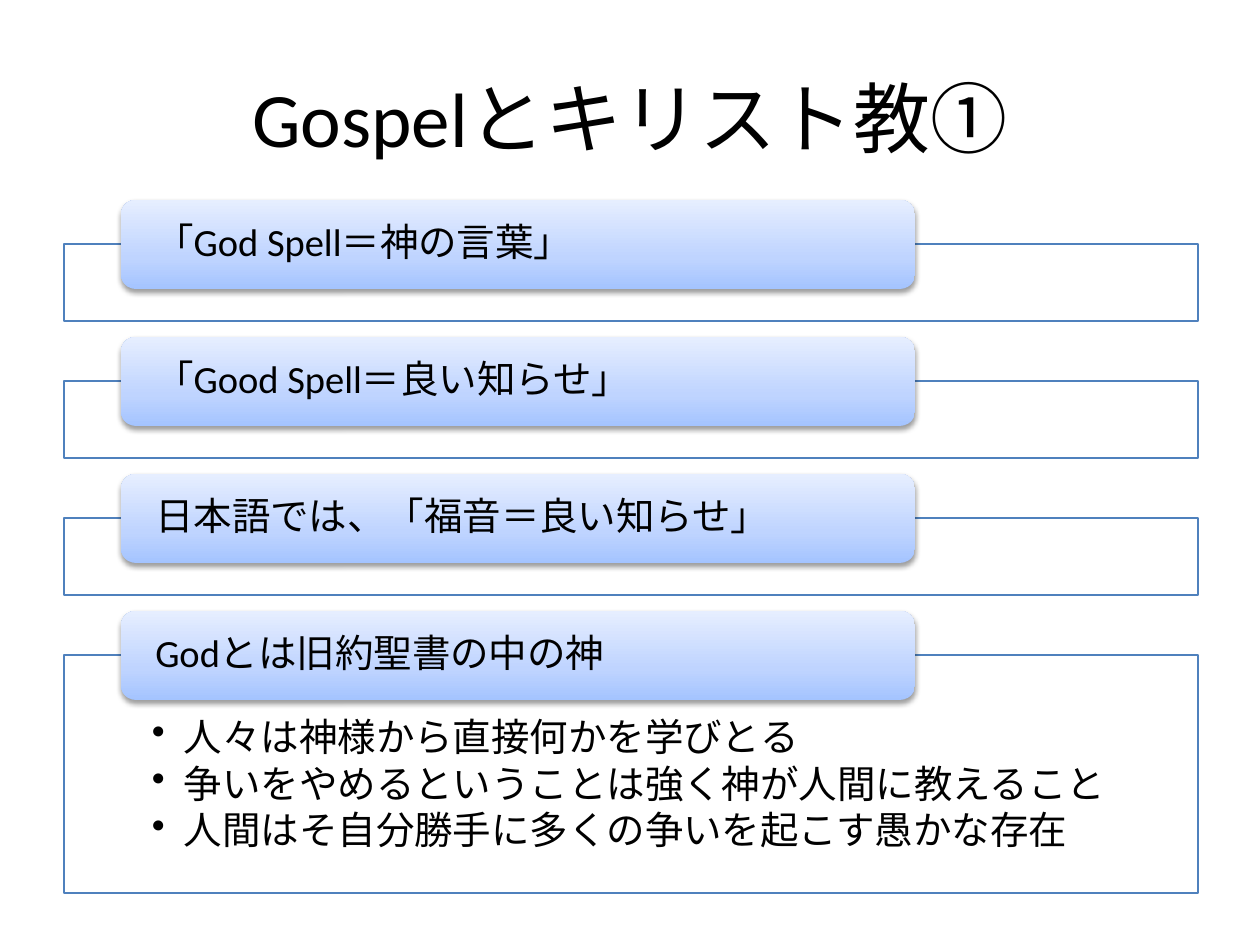
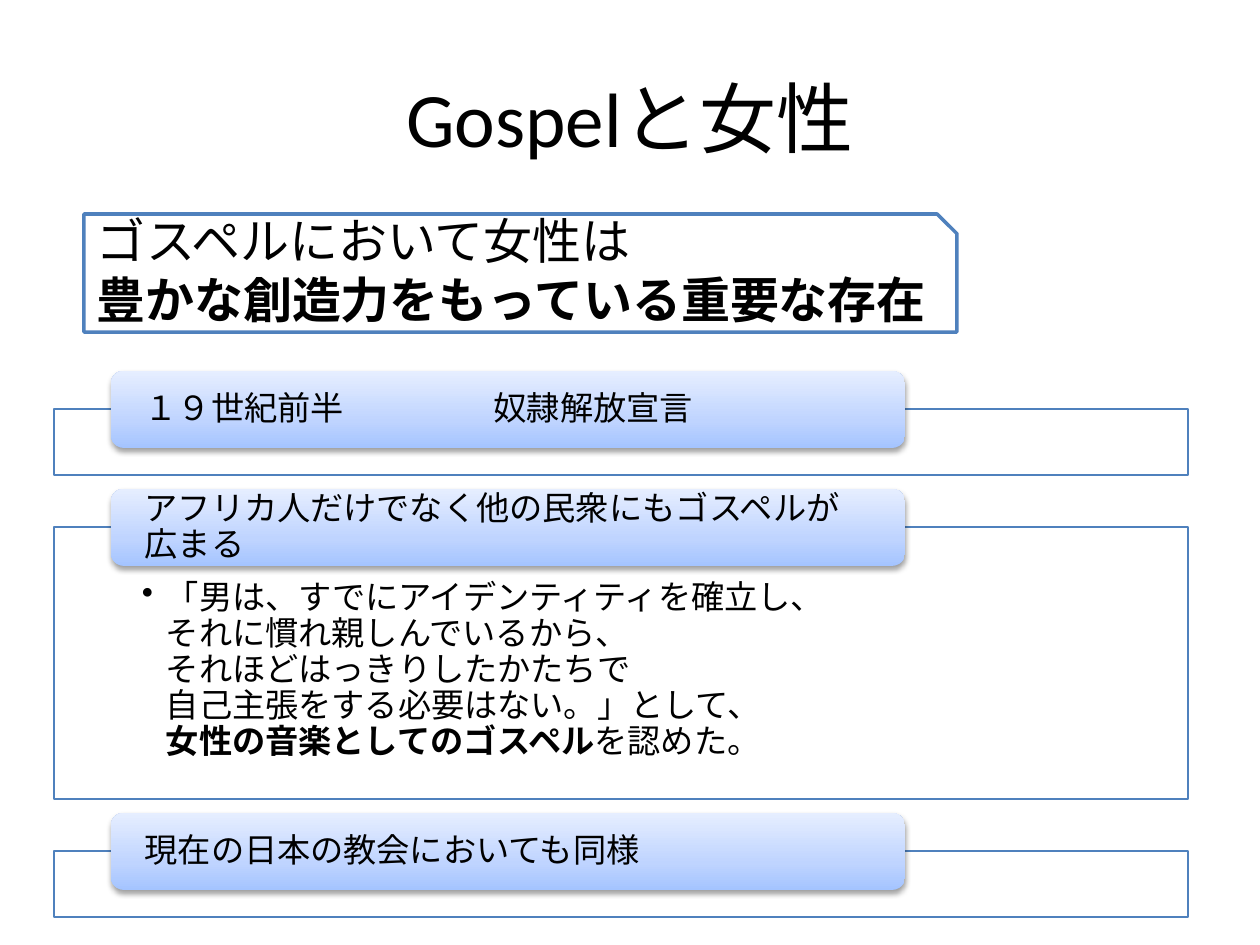
"""Builds two slides on gospel music, each a title over a tabbed list."""
import copy

import lxml.etree
import pptx
import pptx.dml.color
import pptx.enum.lang
import pptx.enum.shapes
import pptx.enum.text
import pptx.oxml.ns
import pptx.util

PX = 914400 // 126
COLORS = {"text": "000000", "white": "FFFFFF", "line": "4F81BD", "shadow": "000000"}
TAB_STOPS = [(0, "A4C4FF"), (0.35, "BFD4FF"), (1, "E6EEFF")]
FONT = "Calibri"
SHAPES = pptx.enum.shapes.MSO_SHAPE
ANCHORS = pptx.enum.text.MSO_ANCHOR
SNIP_BOX = (84, 214, 873, 118)
TITLE_BOX = (63, 38, 1134, 158)

CHRISTIANITY_STYLE = {"size": 22, "tab": 89, "frame": 77, "gap": 16,
                      "indent": 32, "top": 63, "bottom": 21}
WOMEN_STYLE = {"size": 19, "tab": 77, "frame": 66, "gap": 14,
               "indent": 24, "top": 54, "bottom": 19}

CHRISTIANITY = [
    ("「God Spell＝神の言葉」", 77, []),
    ("「Good Spell＝良い知らせ」", 77, []),
    ("日本語では、「福音＝良い知らせ」", 77, []),
    ("Godとは旧約聖書の中の神", 238, [
        [("人々は神様から直接何かを学びとる", False)],
        [("争いをやめるということは強く神が人間に教えること", False)],
        [("人間はそ自分勝手に多くの争いを起こす愚かな存在", False)],
    ]),
]
WOMEN = [
    ("１９世紀前半\t\t奴隷解放宣言", 66, []),
    ("アフリカ人だけでなく他の民衆にもゴスペルが広まる", 272, [
        [("「男は、すでにアイデンティティを確立し、\nそれに慣れ親しんでいるから、\n"
          "それほどはっきりしたかたちで\n自己主張をする必要はない。」として、\n", False),
         ("女性の音楽としてのゴスペル", True), ("を認めた。", False)],
    ]),
    ("現在の日本の教会においても同様", 66, []),
]
WOMEN_MESSAGE = [("ゴスペルにおいて女性は\n", False),
                 ("豊かな創造力をもっている重要な存在", True)]


def rgb(name):
    """Return the named colour."""
    return pptx.dml.color.RGBColor.from_string(COLORS[name])


def emu(*lengths):
    """Turn px lengths into EMU."""
    return [length * PX for length in lengths]


def add_xml(parent, tag, **attrs):
    """Append a DrawingML child with the given attributes."""
    child = lxml.etree.SubElement(parent, pptx.oxml.ns.qn(tag))
    for name, value in attrs.items():
        child.set(name, str(value))
    return child


def style_paragraph(p, size, align=pptx.enum.text.PP_ALIGN.LEFT):
    """Give a paragraph the shared font and its size."""
    p.alignment = align
    p.font.name = FONT
    p.font.size = pptx.util.Pt(size)
    p.font.color.rgb = rgb("text")
    p.font.language_id = pptx.enum.lang.MSO_LANGUAGE_ID.JAPANESE


def add_runs(p, runs):
    """Add (text, bold) runs, with a line break at each newline."""
    for text, bold in runs:
        for i, line in enumerate(text.split("\n")):
            if i:
                p.add_line_break()
            if line:
                r = p.add_run()
                r.text = line
                r.font.bold = bold
                r.font.color.rgb = rgb("text")


def set_frame(sp, anchor, insets=None):
    """Wrap the text of a shape, anchor it and set its px insets."""
    tf = sp.text_frame
    tf.word_wrap = True
    tf.vertical_anchor = anchor
    if insets:
        tf.margin_left, tf.margin_top, tf.margin_right, tf.margin_bottom = emu(*insets)
    return tf


def add_text(s, box, runs, size, anchor, align):
    """Add a text box with one paragraph."""
    tf = set_frame(s.shapes.add_textbox(*emu(*box)), anchor)
    p = tf.paragraphs[0]
    add_runs(p, runs)
    style_paragraph(p, size, align)


def add_title(s, text):
    """Add the slide title."""
    add_text(s, TITLE_BOX, [(text, False)], 44, ANCHORS.MIDDLE,
             pptx.enum.text.PP_ALIGN.CENTER)


def add_outlined(s, kind, box, width):
    """Add a white shape with a blue outline."""
    sp = s.shapes.add_shape(kind, *emu(*box))
    sp.fill.solid()
    sp.fill.fore_color.rgb = rgb("white")
    sp.line.color.rgb = rgb("line")
    sp.line.width = pptx.util.Pt(width)
    sp.shadow.inherit = False
    return sp


def add_detail_frame(s, box, bullets, style):
    """Add the outlined frame behind a tab, with its bullets."""
    sp = add_outlined(s, SHAPES.RECTANGLE, box, 0.75)
    add_xml(sp._element.xpath("./p:spPr/a:solidFill/a:srgbClr")[0], "a:alpha", val=90000)
    tf = set_frame(sp, ANCHORS.TOP, (88, style["top"], 88, style["bottom"]))
    for i, runs in enumerate(bullets):
        p = tf.add_paragraph() if i else tf.paragraphs[0]
        add_runs(p, runs)
        p.line_spacing = 0.9
        p.space_after = pptx.util.Pt(3)
        pPr = p._p.get_or_add_pPr()
        indent = style["indent"] * PX
        pPr.set("marL", str(indent))
        pPr.set("indent", str(-indent))
        add_xml(pPr, "a:buChar", char="•")
        style_paragraph(p, style["size"])


def add_tab(s, box, text, style):
    """Add a rounded gradient tab with a soft shadow."""
    sp = s.shapes.add_shape(SHAPES.ROUNDED_RECTANGLE, *emu(*box))
    sp.fill.gradient()
    sp.fill.gradient_angle = 90
    stops = sp._element.xpath(".//a:gsLst")[0]
    stops.append(copy.deepcopy(stops[0]))
    for stop, (position, color) in zip(sp.fill.gradient_stops, TAB_STOPS):
        stop.position = position
        stop.color.rgb = pptx.dml.color.RGBColor.from_string(color)
    sp.line.fill.background()
    sp.shadow.inherit = False
    shadow = add_xml(sp._element.xpath("./p:spPr/a:effectLst")[0], "a:outerShdw",
                     blurRad=40000, dist=20000, dir=5400000, rotWithShape=0)
    color = add_xml(shadow, "a:srgbClr", val=COLORS["shadow"])
    add_xml(color, "a:alpha", val=38000)
    p = set_frame(sp, ANCHORS.MIDDLE, (30, 0, 30, 0)).paragraphs[0]
    add_runs(p, [(text, False)])
    p.line_spacing = 0.9
    p._p.get_or_add_pPr().set("defTabSz", str(44450 * style["size"]))
    style_paragraph(p, style["size"])


def add_tabbed_list(s, left, top, items, style):
    """Stack tabs, each astride the top edge of its frame."""
    for text, height, bullets in items:
        frame_top = top + style["tab"] // 2
        add_detail_frame(s, (left, frame_top, 1134, height), bullets, style)
        add_tab(s, (left + 57, top, 794, style["tab"]), text, style)
        top = frame_top + height + style["gap"]


def build_christianity(s):
    """Build the slide on gospel and Christianity."""
    add_title(s, "Gospelとキリスト教①")
    add_tabbed_list(s, 64, 200, CHRISTIANITY, CHRISTIANITY_STYLE)


def build_women(s):
    """Build the slide on gospel and women."""
    add_outlined(s, SHAPES.SNIP_1_RECTANGLE, SNIP_BOX, 2)
    add_title(s, "Gospelと女性")
    add_tabbed_list(s, 54, 371, WOMEN, WOMEN_STYLE)
    add_text(s, (84, 204, 1052, 131), WOMEN_MESSAGE, 28, ANCHORS.TOP,
             pptx.enum.text.PP_ALIGN.LEFT)


def main():
    """Build and save the presentation."""
    prs = pptx.Presentation()
    prs.slide_width, prs.slide_height = emu(1260, 945)
    for build in (build_christianity, build_women):
        build(prs.slides.add_slide(prs.slide_layouts[6]))
    prs.save("out.pptx")


if __name__ == "__main__":
    main()
